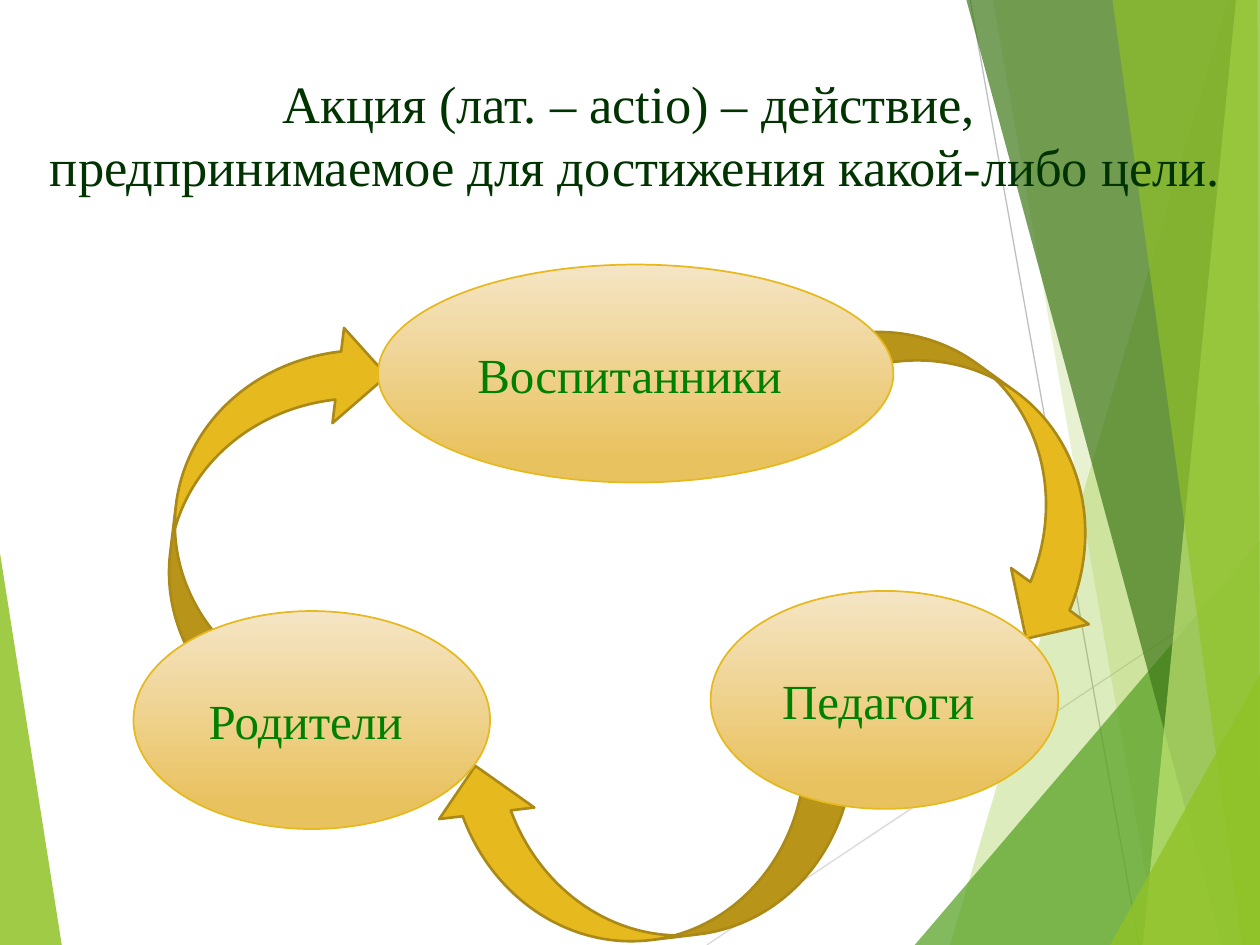
import pptx
import pptx.dml.color
import pptx.enum.shapes
import pptx.enum.text
import pptx.oxml
import pptx.oxml.ns
import pptx.util

WIDTH, HEIGHT = 10, 7.5
FONT = "Times New Roman"
GOLD, DARK_GOLD = "E6B91E", "AA8916"
ELLIPSE_HEIGHT = 1.73
ARROW_SIZE = (1.54, 3.39)

# Background facets: corner points, colour, opacity in percent
LEFT_FACET = ([(0, 4.39), (0.49, HEIGHT), (0, HEIGHT)], "90C226", 85)
RIGHT_FACETS = [
    ([(9.75, 0), (7.54, HEIGHT), (WIDTH, HEIGHT), (WIDTH, 0)], "90C226", 30),
    ([(7.88, 0), (9.19, HEIGHT), (WIDTH, HEIGHT), (WIDTH, 0)], "90C226", 20),
    ([(7.26, HEIGHT), (WIDTH, 4.29), (WIDTH, HEIGHT)], "54A021", 72),
    ([(7.67, 0), (9.7, HEIGHT), (WIDTH, HEIGHT), (WIDTH, 0)], "3F7819", 70),
    ([(9.81, 0), (9.07, HEIGHT), (WIDTH, HEIGHT), (WIDTH, 0)], "C0E474", 70),
    ([(8.83, 0), (9.86, HEIGHT), (WIDTH, HEIGHT), (9.98, 0)], "90C226", 65),
    ([(8.81, HEIGHT), (WIDTH, 5.35), (WIDTH, HEIGHT)], "90C226", 80),
]
# Guide lines: start, end, colour
GUIDES = [
    ((5.61, HEIGHT), (WIDTH, 4.57), "D9D9D9"),
    ((7.7, 0), (9.04, HEIGHT), "BFBFBF"),
]
# Cycle arrows: left, top, rotation
ARROWS = [(1.38, 2.5, 186.9), (6.76, 1.98, 305.9), (4.4, 4.99, 83.1)]
# Participants: name, left, top, width
PARTICIPANTS = [
    ("Воспитанники ", 3, 2.1, 4.09),
    ("Педагоги ", 5.64, 4.69, 2.76),
    ("Родители ", 1.06, 4.85, 2.83),
]


def inches(*lengths):
    return [pptx.util.Inches(length) for length in lengths]


def color(hex_string):
    return pptx.dml.color.RGBColor.from_string(hex_string)


def set_line(shape, hex_string, points):
    shape.line.color.rgb = color(hex_string)
    shape.line.width = pptx.util.Pt(points)


def format_text(text_frame, text, size, hex_string):
    text_frame.text = text
    text_frame.word_wrap = True
    text_frame.vertical_anchor = pptx.enum.text.MSO_ANCHOR.MIDDLE
    for paragraph in text_frame.paragraphs:
        paragraph.alignment = pptx.enum.text.PP_ALIGN.CENTER
        paragraph.font.name = FONT
        paragraph.font.size = pptx.util.Pt(size)
        paragraph.font.color.rgb = color(hex_string)


def add_facet(slide, points, hex_string, opacity):
    corners = [inches(*point) for point in points]
    builder = slide.shapes.build_freeform(*corners[0])
    builder.add_line_segments(corners[1:], close=True)
    shape = builder.convert_to_shape()
    shape.shadow.inherit = False
    shape.fill.solid()
    shape.fill.fore_color.rgb = color(hex_string)
    shape.line.fill.background()
    fill_color = shape.fill._xPr.find(".//" + pptx.oxml.ns.qn("a:srgbClr"))
    alpha = pptx.oxml.parse_xml(
        f'<a:alpha {pptx.oxml.ns.nsdecls("a")} val="{opacity * 1000}"/>')
    fill_color.append(alpha)


def add_guide(slide, start, end, hex_string):
    connector = slide.shapes.add_connector(
        pptx.enum.shapes.MSO_CONNECTOR.STRAIGHT, *inches(*start, *end))
    set_line(connector, hex_string, 0.75)
    connector._element.spPr.append(
        pptx.oxml.parse_xml(f'<a:effectLst {pptx.oxml.ns.nsdecls("a")}/>'))


def add_arrow(slide, left, top, rotation):
    shape = slide.shapes.add_shape(
        pptx.enum.shapes.MSO_SHAPE.CURVED_LEFT_ARROW,
        *inches(left, top, *ARROW_SIZE))
    shape.shadow.inherit = False
    shape.rotation = rotation
    shape.adjustments[1] = 0.494
    shape.fill.solid()
    shape.fill.fore_color.rgb = color(GOLD)
    set_line(shape, DARK_GOLD, 1.5)


def add_participant(slide, name, left, top, width):
    shape = slide.shapes.add_shape(
        pptx.enum.shapes.MSO_SHAPE.OVAL,
        *inches(left, top, width, ELLIPSE_HEIGHT))
    shape.shadow.inherit = False
    shape.fill.gradient()
    shape.fill.gradient_angle = 270
    stops = [(0, "F5E5C5"), (0.88, "E9C260")]
    for stop, (position, hex_string) in zip(shape.fill.gradient_stops, stops):
        stop.position = position
        stop.color.rgb = color(hex_string)
    set_line(shape, GOLD, 1)
    format_text(shape.text_frame, name, 28, "008000")


def place_title(slide, text):
    title = slide.shapes.title
    title.left, title.top, title.width, title.height = inches(0.28, 0.51, 9.53, 1.11)
    format_text(title.text_frame, text, 30, "003300")
    title.text_frame.auto_size = pptx.enum.text.MSO_AUTO_SIZE.NONE
    # Bring the title in front of the facets
    slide.shapes._spTree.append(title._element)


def main():
    presentation = pptx.Presentation()
    presentation.slide_width, presentation.slide_height = inches(WIDTH, HEIGHT)
    slide = presentation.slides.add_slide(presentation.slide_layouts[5])

    # Background
    add_facet(slide, *LEFT_FACET)
    for guide in GUIDES:
        add_guide(slide, *guide)
    for facet in RIGHT_FACETS:
        add_facet(slide, *facet)

    # Cycle, with the arrows behind the ellipses
    for arrow in ARROWS:
        add_arrow(slide, *arrow)
    place_title(slide, "Акция (лат. – actio) – действие, \n"
                       "предпринимаемое для достижения какой-либо цели.")
    for participant in PARTICIPANTS:
        add_participant(slide, *participant)

    presentation.save("out.pptx")


if __name__ == "__main__":
    main()
